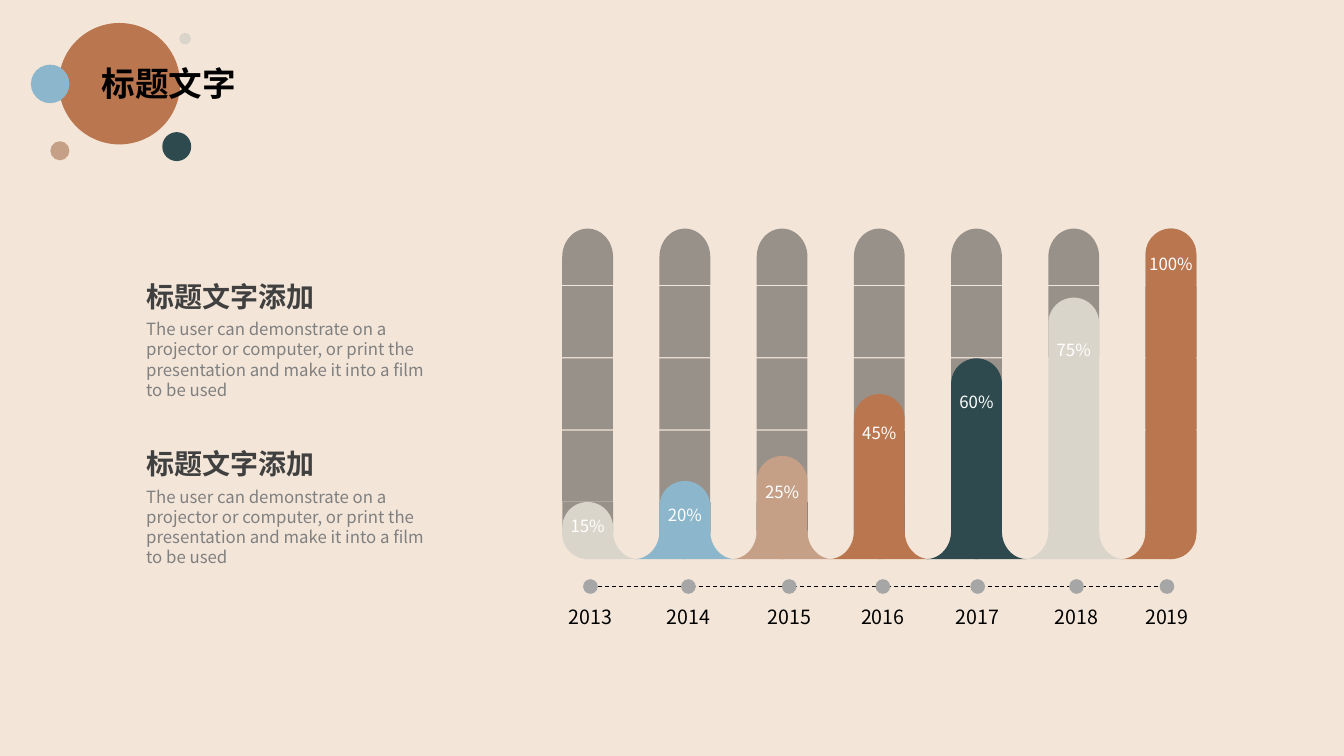
from dataclasses import dataclass
from math import cos, pi, sin

from lxml.etree import SubElement
from pptx import Presentation
from pptx.dml.color import RGBColor
from pptx.enum.dml import MSO_LINE_DASH_STYLE as Dash
from pptx.enum.shapes import MSO_CONNECTOR as Connector
from pptx.enum.shapes import MSO_SHAPE as Preset
from pptx.enum.text import MSO_ANCHOR as Anchor
from pptx.enum.text import MSO_AUTO_SIZE as AutoSize
from pptx.enum.text import PP_ALIGN as Align
from pptx.oxml.ns import qn
from pptx.shapes.autoshape import Shape
from pptx.slide import Slide
from pptx.util import Cm, Pt


@dataclass(frozen=True)
class Theme:
    font: str = "Noto Sans CJK SC"
    background: str = "F3E5D8"
    copper: str = "BA764F"
    blue: str = "8BB6CB"
    tan: str = "C5A086"
    teal: str = "2E4A4E"
    stone: str = "D9D5CA"
    track: str = "3E3E3D"
    dot: str = "A6A6A6"
    black: str = "000000"
    white: str = "FFFFFF"
    heading: str = "404040"
    body: str = "808080"
    title_size: int = 24
    heading_size: int = 20
    year_size: int = 14
    body_size: int = 12


@dataclass(frozen=True)
class Box:
    left: float
    top: float
    width: float
    height: float


@dataclass(frozen=True)
class TextStyle:
    size: int
    color: str
    bold: bool = False
    align: Align = Align.LEFT


@dataclass(frozen=True)
class Column:
    year: str
    percent: str
    color: str
    bar_top: float
    label_top: float
    dot_center: float
    feet: tuple[int, ...] = (1, -1)
    track_parts: int = 5


@dataclass(frozen=True)
class Circle:
    box: Box
    color: str


THEME = Theme()
TITLE_STYLE = TextStyle(THEME.title_size, THEME.black, True)
HEADING_STYLE = TextStyle(THEME.heading_size, THEME.heading, True)
BODY_STYLE = TextStyle(THEME.body_size, THEME.body)
PERCENT_STYLE = TextStyle(THEME.body_size, THEME.white, align=Align.CENTER)
YEAR_STYLE = TextStyle(THEME.year_size, THEME.black, align=Align.CENTER)

FIRST_CENTER, PITCH, BAR_WIDTH = 14.81, 2.45, 1.28
TRACK_TOP, BAR_BOTTOM, CAP_HEIGHT = 5.76, 14.09, 1.42
SEGMENT_TOP, SEGMENT_PITCH, SEGMENT_HEIGHT = 7.21, 1.82, 1.79
FOOT_TOP, FOOT_RADIUS_X, FOOT_RADIUS_Y = 13.39, 0.63, 0.7
TIMELINE_Y, DOT_SIZE, YEAR_TOP = 14.78, 0.37, 15.11

COLUMNS = [
    Column("2013", "15%", THEME.stone, 12.65, 12.88, 14.88, feet=(1,)),
    Column("2014", "20%", THEME.blue, 12.12, 12.6, 17.35),
    Column("2015", "25%", THEME.tan, 11.49, 12.01, 19.89),
    Column("2016", "45%", THEME.copper, 9.93, 10.52, 22.25),
    Column("2017", "60%", THEME.teal, 9.03, 9.75, 24.64),
    Column("2018", "75%", THEME.stone, 7.5, 8.43, 27.13, track_parts=2),
    Column("2019", "100%", THEME.copper, 5.76, 6.27, 29.41, feet=(-1,)),
]
CIRCLES = [
    Circle(Box(1.48, 0.58, 3.06, 3.06), THEME.copper),
    Circle(Box(0.78, 1.63, 0.97, 0.97), THEME.blue),
    Circle(Box(1.27, 3.56, 0.48, 0.48), THEME.tan),
    Circle(Box(4.09, 3.33, 0.73, 0.73), THEME.teal),
    Circle(Box(4.52, 0.83, 0.29, 0.29), THEME.stone),
]
HEADING = "标题文字添加"
BODY = (
    "The user can demonstrate on a projector or computer, "
    "or print the presentation and make it into a film to be used"
)


def paint(shape: Shape, color: str, opacity: int = 100) -> None:
    shape.shadow.inherit = False
    shape.fill.solid()
    shape.fill.fore_color.rgb = RGBColor.from_string(color)
    shape.line.fill.background()
    if opacity < 100:
        for color_element in shape.element.spPr.iter(qn("a:srgbClr")):
            SubElement(color_element, qn("a:alpha"), val=str(opacity * 1000))


def add_preset(slide: Slide, preset: Preset, box: Box, color: str, opacity: int = 100) -> Shape:
    shape = slide.shapes.add_shape(preset, Cm(box.left), Cm(box.top), Cm(box.width), Cm(box.height))
    paint(shape, color, opacity)
    return shape


def write_text(shape: Shape, text: str, style: TextStyle) -> None:
    frame = shape.text_frame
    frame.text = text
    frame.word_wrap = True
    frame.auto_size = AutoSize.NONE
    frame.vertical_anchor = Anchor.TOP
    paragraph = frame.paragraphs[0]
    paragraph.alignment = style.align
    paragraph.space_before = Pt(0)
    font = paragraph.font
    font.name = THEME.font
    font.size = Pt(style.size)
    font.bold = style.bold
    font.color.rgb = RGBColor.from_string(style.color)
    properties = paragraph._p.get_or_add_pPr()
    properties.set("marL", "0")
    properties.set("indent", "0")
    defaults = properties.find(qn("a:defRPr"))
    SubElement(defaults, qn("a:ea"), typeface=THEME.font)
    defaults.addprevious(SubElement(properties, qn("a:buNone")))


def add_label(slide: Slide, center: float, top: float, text: str, style: TextStyle) -> None:
    width = 2.2
    shape = slide.shapes.add_textbox(Cm(center - width / 2), Cm(top), Cm(width), Cm(0.8))
    write_text(shape, text, style)


def fill_placeholder(shape: Shape, box: Box, text: str, style: TextStyle) -> None:
    shape.left, shape.top = Cm(box.left), Cm(box.top)
    shape.width, shape.height = Cm(box.width), Cm(box.height)
    write_text(shape, text, style)


def add_track(slide: Slide, column: Column, center: float) -> None:
    segment_tops = [SEGMENT_TOP + SEGMENT_PITCH * index for index in range(3)]
    tops = [TRACK_TOP, *segment_tops, BAR_BOTTOM - CAP_HEIGHT - 0.02]
    for index, top in enumerate(tops[: column.track_parts]):
        opacity = 100 if top > column.bar_top + 0.05 else 50
        if index in (0, 4):
            middle = top + CAP_HEIGHT / 2
            box = Box(center - CAP_HEIGHT / 2, middle - BAR_WIDTH / 2, CAP_HEIGHT, BAR_WIDTH)
            cap = add_preset(slide, Preset.FLOWCHART_DELAY, box, THEME.track, opacity)
            cap.rotation = 270 if index == 0 else 90
        else:
            box = Box(center - BAR_WIDTH / 2, top, BAR_WIDTH, SEGMENT_HEIGHT)
            add_preset(slide, Preset.RECTANGLE, box, THEME.track, opacity)


def add_foot(slide: Slide, center: float, side: int, color: str) -> None:
    tip = BAR_WIDTH / 2 + FOOT_RADIUS_X
    angles = [pi / 2 * step / 16 for step in range(17)]
    curve = [(tip - FOOT_RADIUS_X * cos(a), FOOT_TOP + FOOT_RADIUS_Y * sin(a)) for a in angles]
    points = [(Cm(center + side * x), Cm(y)) for x, y in [*curve, (0, BAR_BOTTOM)]]
    builder = slide.shapes.build_freeform(Cm(center), Cm(FOOT_TOP))
    builder.add_line_segments(points, close=True)
    paint(builder.convert_to_shape(), color)


def add_column(slide: Slide, column: Column, center: float) -> None:
    add_track(slide, column, center)
    for side in column.feet:
        add_foot(slide, center, side, column.color)
    box = Box(center - BAR_WIDTH / 2, column.bar_top, BAR_WIDTH, BAR_BOTTOM - column.bar_top)
    bar = add_preset(slide, Preset.ROUNDED_RECTANGLE, box, column.color)
    bar.adjustments[0] = 0.5
    add_label(slide, center, column.label_top, column.percent, PERCENT_STYLE)


def add_timeline(slide: Slide) -> None:
    start, end = Cm(COLUMNS[0].dot_center), Cm(COLUMNS[-1].dot_center)
    line = slide.shapes.add_connector(Connector.STRAIGHT, start, Cm(TIMELINE_Y), end, Cm(TIMELINE_Y))
    line.line.color.rgb = RGBColor.from_string(THEME.black)
    line.line.width = Pt(0.75)
    line.line.dash_style = Dash.DASH
    SubElement(line.element.spPr, qn("a:effectLst"))
    for column in COLUMNS:
        box = Box(column.dot_center - DOT_SIZE / 2, TIMELINE_Y - DOT_SIZE / 2, DOT_SIZE, DOT_SIZE)
        add_preset(slide, Preset.OVAL, box, THEME.dot)
        add_label(slide, column.dot_center, YEAR_TOP, column.year, YEAR_STYLE)


def main() -> None:
    presentation = Presentation()
    presentation.slide_width, presentation.slide_height = Cm(33.87), Cm(19.05)
    slide = presentation.slides.add_slide(presentation.slide_layouts.get_by_name("Comparison"))
    slide.background.fill.solid()
    slide.background.fill.fore_color.rgb = RGBColor.from_string(THEME.background)
    title, *blocks = slide.placeholders
    for circle in CIRCLES:
        add_preset(slide, Preset.OVAL, circle.box, circle.color)
    fill_placeholder(title, Box(2.31, 1.47, 4.2, 1.27), "标题文字", TITLE_STYLE)
    title.element.getparent().append(title.element)
    for top, heading, body in zip((6.91, 11.13), blocks[::2], blocks[1::2]):
        fill_placeholder(heading, Box(3.43, top, 5.5, 1.12), HEADING, HEADING_STYLE)
        fill_placeholder(body, Box(3.43, top + 1, 7.92, 2.31), BODY, BODY_STYLE)
    for index, column in enumerate(COLUMNS):
        add_column(slide, column, FIRST_CENTER + PITCH * index)
    add_timeline(slide)
    presentation.save("out.pptx")


if __name__ == "__main__":
    main()
